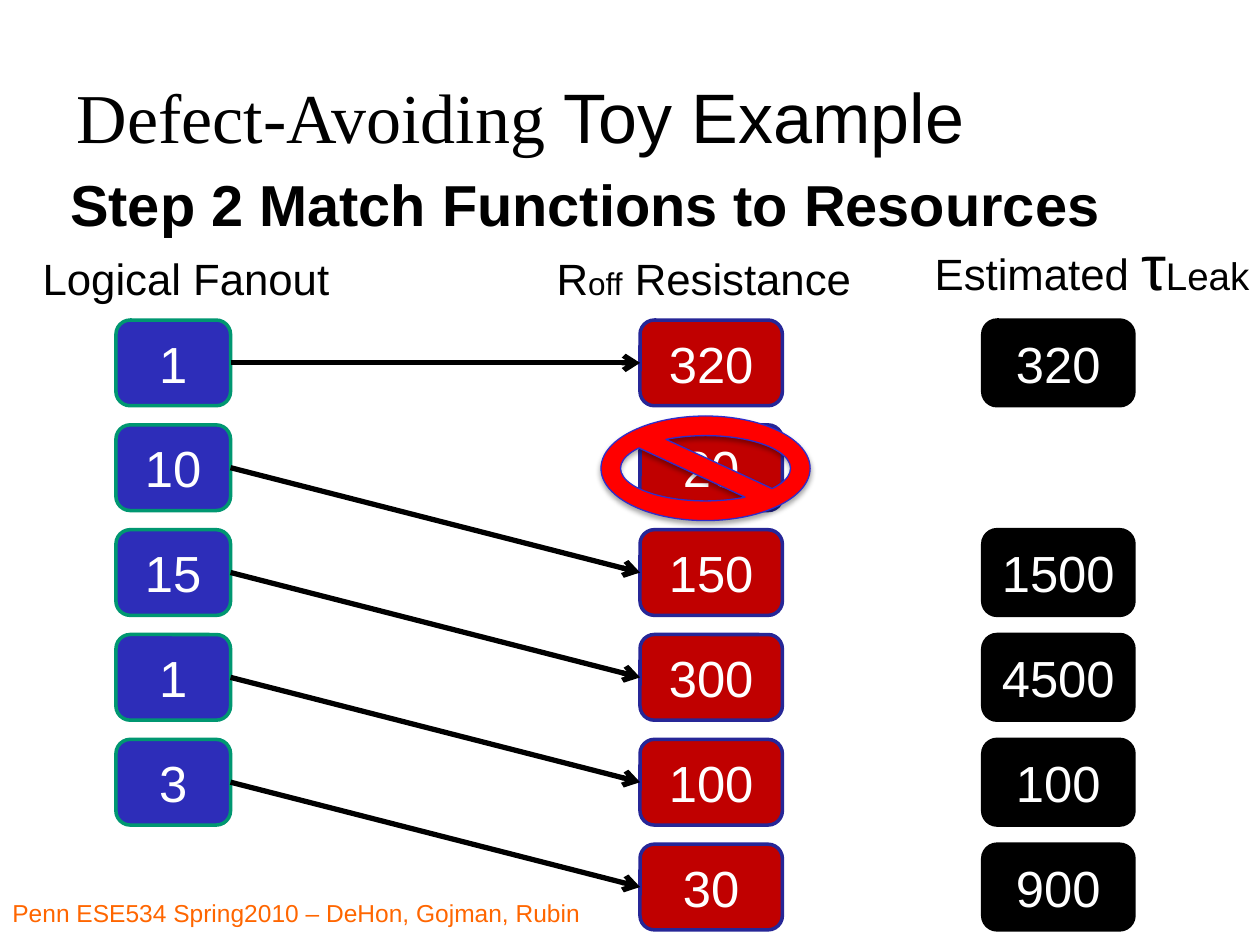
from lxml import etree
from pptx import Presentation
from pptx.dml.color import RGBColor
from pptx.enum.shapes import MSO_CONNECTOR as Connector, MSO_SHAPE as Shape
from pptx.enum.text import MSO_ANCHOR as Anchor, PP_ALIGN as Align
from pptx.oxml import parse_xml
from pptx.oxml.ns import nsdecls, qn
from pptx.util import Inches, Pt

BLACK = RGBColor(0x00, 0x00, 0x00)
WHITE = RGBColor(0xFF, 0xFF, 0xFF)
BLUE = RGBColor(0x2D, 0x2D, 0xB9)
GREEN = RGBColor(0x00, 0x97, 0x71)
CRIMSON = RGBColor(0xC0, 0x00, 0x00)
NAVY = RGBColor(0x26, 0x26, 0x97)
RED = RGBColor(0xFF, 0x00, 0x00)
INDIGO = RGBColor(0x2E, 0x2E, 0xCB)
ORANGE = RGBColor(0xFF, 0x66, 0x00)

COLUMN_TOP = 2.54
ROW_PITCH = 0.832
BOX_HEIGHT = 0.68

FANOUTS = ["1", "10", "15", "1", "3"]
RESISTANCES = ["320", "20", "150", "300", "100", "30"]
LEAKAGES = ["320", None, "1500", "4500", "100", "900"]
MATCHES = [0, 2, 3, 4, 5]
DEFECT_ROW = 1


def style_paragraph(paragraph, size, color, bold=False):
    paragraph.font.name = "Arial"
    paragraph.font.size = Pt(size)
    paragraph.font.color.rgb = color
    paragraph.font.bold = bold


def add_title(slide, left, top, width, height):
    title = slide.shapes.title
    title.left, title.top = Inches(left), Inches(top)
    title.width, title.height = Inches(width), Inches(height)
    frame = title.text_frame
    frame.margin_left = frame.margin_right = 0
    frame.margin_top = frame.margin_bottom = 0
    frame.vertical_anchor = Anchor.MIDDLE
    paragraph = frame.paragraphs[0]
    paragraph.alignment = Align.LEFT
    style_paragraph(paragraph, 40, BLACK)
    for text, font_name in [("Defect-Avoiding", "Times New Roman"), (" Toy Example", "Arial")]:
        run = paragraph.add_run()
        run.text = text
        run.font.name = font_name


def add_label(slide, left, top, width, height, parts, color=BLACK, bold=False, wrap=False):
    label = slide.shapes.add_textbox(Inches(left), Inches(top), Inches(width), Inches(height))
    frame = label.text_frame
    frame.word_wrap = wrap
    paragraph = frame.paragraphs[0]
    style_paragraph(paragraph, parts[0][1], color, bold)
    for text, size in parts:
        run = paragraph.add_run()
        run.text = text
        if len(parts) > 1:
            run.font.size = Pt(size)


def add_column(slide, left, top, width, values, fill, outline):
    boxes = []
    for row, value in enumerate(values):
        if value is None:
            continue
        box = slide.shapes.add_shape(
            Shape.ROUNDED_RECTANGLE, Inches(left), Inches(top + row * ROW_PITCH),
            Inches(width), Inches(BOX_HEIGHT))
        box.shadow.inherit = False
        box.fill.solid()
        box.fill.fore_color.rgb = fill
        box.line.color.rgb = outline
        box.line.width = Pt(2)
        box.text_frame.vertical_anchor = Anchor.MIDDLE
        paragraph = box.text_frame.paragraphs[0]
        paragraph.text = value
        paragraph.alignment = Align.CENTER
        style_paragraph(paragraph, 29, WHITE)
        boxes.append(box)
    return boxes


def add_match_arrow(slide, function_box, resource_box):
    arrow = slide.shapes.add_connector(Connector.STRAIGHT, 0, 0, 0, 0)
    arrow.begin_connect(function_box, 3)
    arrow.end_connect(resource_box, 1)
    arrow.line.color.rgb = BLACK
    arrow.line.width = Pt(3)
    etree.SubElement(arrow.line._get_or_add_ln(), qn("a:tailEnd"), type="arrow")
    etree.SubElement(arrow._element.spPr, qn("a:effectLst"))


def add_defect_sign(slide, left, top, width, height):
    sign = slide.shapes.add_shape(
        Shape.NO_SYMBOL, Inches(left), Inches(top), Inches(width), Inches(height))
    sign.fill.solid()
    sign.fill.fore_color.rgb = RED
    sign.line.color.rgb = INDIGO
    sign.line.width = Pt(0.75)
    sign._element.spPr.append(parse_xml(
        f'<a:effectLst {nsdecls("a")}>'
        f'<a:outerShdw blurRad="{Pt(3.1)}" dist="{Pt(1.8)}" dir="5400000" rotWithShape="0">'
        '<a:srgbClr val="000000"><a:alpha val="35000"/></a:srgbClr>'
        '</a:outerShdw></a:effectLst>'))


def build_slide(presentation):
    slide = presentation.slides.add_slide(presentation.slide_layouts[5])
    add_title(slide, 0.61, 0.34, 9.39, 1.16)
    add_label(slide, 0.46, 1.29, 8.43, 0.65,
              [("Step 2 Match Functions to Resources", 33)], bold=True)
    add_label(slide, 0.24, 1.95, 2.48, 0.51, [("Logical Fanout", 25)])
    add_label(slide, 4.32, 1.95, 2.54, 0.51, [("R", 25), ("off", 18), (" Resistance", 25)])
    add_label(slide, 7.32, 1.76, 2.79, 0.7, [("Estimated ", 25), ("τ", 36), ("Leak", 22)])

    functions = add_column(slide, 0.92, COLUMN_TOP, 0.91, FANOUTS, BLUE, GREEN)
    resources = add_column(slide, 5.08, COLUMN_TOP, 1.13, RESISTANCES, CRIMSON, NAVY)
    add_column(slide, 7.8, COLUMN_TOP, 1.2, LEAKAGES, BLACK, BLACK)
    for function_box, resource_row in zip(functions, MATCHES):
        add_match_arrow(slide, function_box, resources[resource_row])

    add_defect_sign(slide, 4.77, COLUMN_TOP + DEFECT_ROW * ROW_PITCH - 0.07, 1.66, 0.83)
    add_label(slide, 0, 7.08, 5.75, 0.42,
              [("Penn ESE534 Spring2010 – DeHon, Gojman, Rubin", 14)], color=ORANGE, wrap=True)


def main():
    presentation = Presentation()
    presentation.slide_width = Inches(10)
    presentation.slide_height = Inches(7.5)
    build_slide(presentation)
    presentation.save("out.pptx")


if __name__ == "__main__":
    main()
